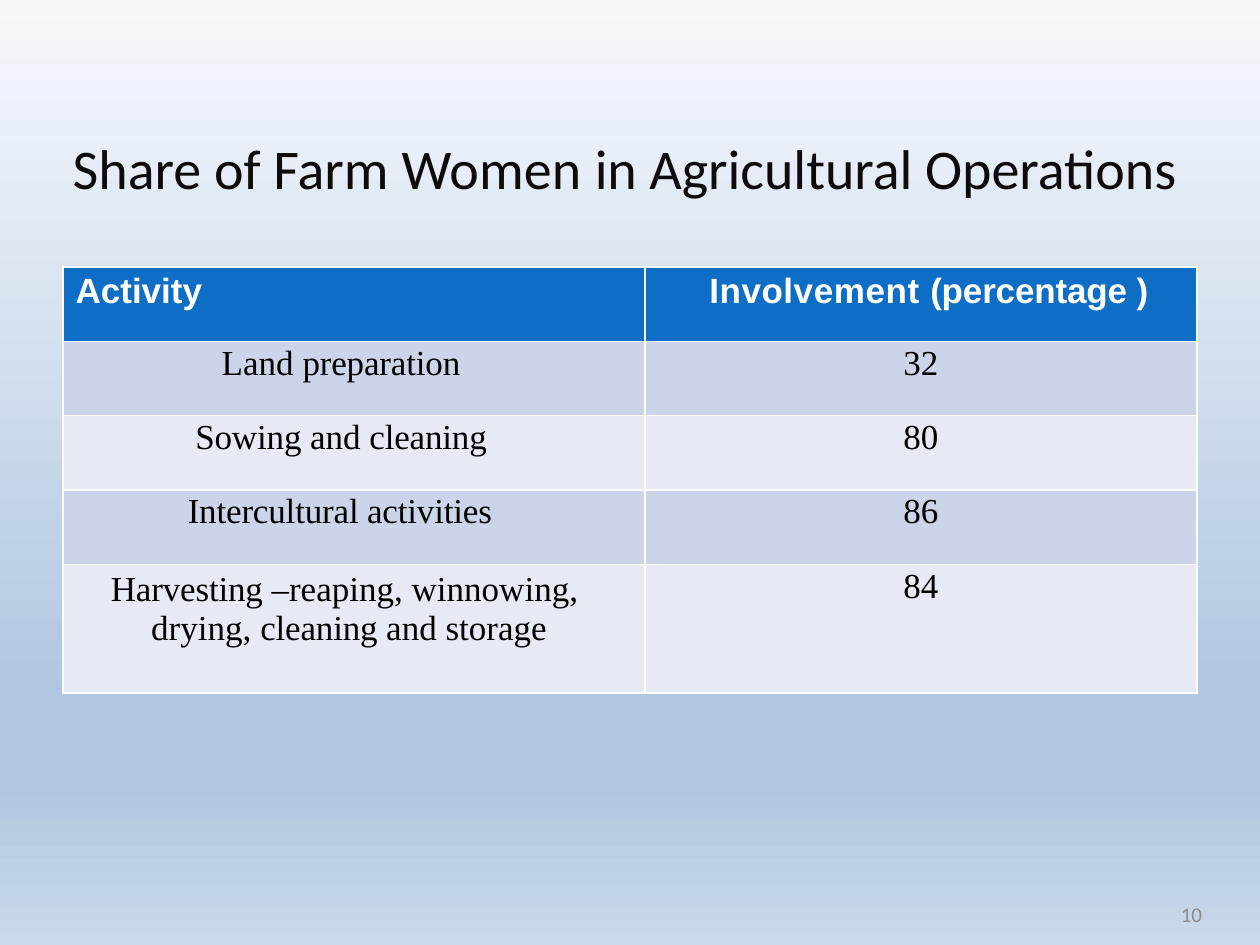
from lxml import etree
from pptx import Presentation, util as u
from pptx.dml.color import RGBColor
from pptx.enum import text as t
from pptx.oxml import ns

WIDTH, HEIGHT = 10, 7.5
SKY = [(0, "F6F9FC"), (74, "B0C6E1"), (83, "B0C6E1"), (100, "CAD9EB")]
HEADER, BANDS = "0E6EC5", ("CCD4E9", "E6EAF4")
COLUMNS, ROWS = (4.62, 4.38), (0.59, 0.59, 0.59, 0.59, 1.02)
HEADINGS = [
    ([("Activity", 0)], 0.1),
    ([("Involvement ", 0.3), ("(percentage ", -0.1), (")", 1.1)], 0.51),
]
ACTIVITIES = [
    ([("Land ", 0), ("preparation", -0.1)], 1.26, 0, "32"),
    ([("Sowing ", -0.1), ("and ", 0), ("cleaning", -0.1)], 1.05, 0, "80"),
    ([("Intercultural activities", -0.1)], 0.99, 0, "86"),
    ([("Harvesting ", -0.1), ("–reaping, winnowing, drying, ", 0),
      ("cleaning ", -0.1), ("and storage", 0)], 0.7, -0.32, "84"),
]


def colour(value):
    """Turn a hex string into a colour."""
    return RGBColor.from_string(value)


def write(frame, runs, font, size, ink, bold=False, align=t.PP_ALIGN.LEFT,
          margin=0, indent=0, before=0, line=None):
    """Write one paragraph of (words, letter spacing) runs."""
    frame.word_wrap = True
    paragraph = frame.paragraphs[0]
    paragraph.alignment = align
    paragraph.space_before = u.Pt(before)
    if line:
        paragraph.line_spacing = u.Pt(line)
    properties = paragraph._p.get_or_add_pPr()
    properties.set("marL", str(u.Inches(margin)))
    properties.set("indent", str(u.Inches(indent)))
    for words, spacing in runs:
        run = paragraph.add_run()
        run.text = words
        run.font.name, run.font.size, run.font.bold = font, u.Pt(size), bold
        run.font.color.rgb = colour(ink)
        run._r.get_or_add_rPr().set("spc", str(round(spacing * 100)))


def paint_background(slide, stops):
    """Fill the slide with a gradient from top to bottom."""
    fill = slide.background.fill
    fill.gradient()
    fill.gradient_angle = 270
    stop_list = slide._element.find(".//" + ns.qn("a:gsLst"))
    for stop in list(stop_list):
        stop_list.remove(stop)
    for position, value in stops:
        stop = etree.SubElement(stop_list, ns.qn("a:gs"), pos=str(position * 1000))
        etree.SubElement(stop, ns.qn("a:srgbClr"), val=value)


def add_label(slide, box, words, size, ink, top=0, **style):
    """Place a line of Calibri text in the middle of a box."""
    frame = slide.shapes.add_textbox(*map(u.Inches, box)).text_frame
    frame.margin_left = frame.margin_right = frame.margin_bottom = 0
    frame.margin_top = u.Inches(top)
    frame.vertical_anchor = t.MSO_ANCHOR.MIDDLE
    write(frame, words, "Calibri", size, ink, **style)


def fill_cell(cell, background, runs, font, ink, top=0.02, **style):
    """Colour a cell and write its text."""
    cell.fill.solid()
    cell.fill.fore_color.rgb = colour(background)
    cell.margin_left = cell.margin_right = cell.margin_bottom = 0
    cell.margin_top = u.Inches(top)
    write(cell.text_frame, runs, font, 20, ink, **style)


def add_activity_table(slide, left, top):
    """Build the table of activities and percentages."""
    box = map(u.Inches, (left, top, sum(COLUMNS), sum(ROWS)))
    table = slide.shapes.add_table(len(ROWS), len(COLUMNS), *box).table
    for column, width in zip(table.columns, COLUMNS):
        column.width = u.Inches(width)
    for row, height in zip(table.rows, ROWS):
        row.height = u.Inches(height)
    for index, (runs, margin) in enumerate(HEADINGS):
        fill_cell(table.cell(0, index), HEADER, runs, "Arial", "FFFFFF",
                  top=0.04, bold=True, margin=margin, before=2.7)
    for index, (runs, margin, indent, share) in enumerate(ACTIVITIES):
        band = BANDS[index % 2]
        layout = dict(top=0.05, before=3.8, line=22.2) if indent else dict(before=1.5)
        fill_cell(table.cell(index + 1, 0), band, runs, "Times New Roman", "000000",
                  margin=margin, indent=indent, **layout)
        fill_cell(table.cell(index + 1, 1), band, [(share, 0)], "Times New Roman",
                  "000000", align=t.PP_ALIGN.CENTER, before=1.5)


def main():
    """Build and save the presentation."""
    presentation = Presentation()
    presentation.slide_width = u.Inches(WIDTH)
    presentation.slide_height = u.Inches(HEIGHT)
    slide = presentation.slides.add_slide(presentation.slide_layouts[6])
    paint_background(slide, SKY)
    title = [("Share of Farm ", 0), ("Women ", 0.1), ("in ", -0.1),
             ("Agricultural Operations", 0)]
    add_label(slide, (0.15, 1.04, 9.61, 0.56), title, 32, "0C0C0C", top=0.01,
              align=t.PP_ALIGN.CENTER, margin=0.01, before=1)
    add_label(slide, (9.27, 7.07, 0.27, 0.3), [("10", 0)], 12, "8C8C8C", top=0.08,
              align=t.PP_ALIGN.RIGHT, margin=0.04, line=14.2)
    add_activity_table(slide, WIDTH * 0.05, 2.12)
    presentation.save("out.pptx")


if __name__ == "__main__":
    main()
